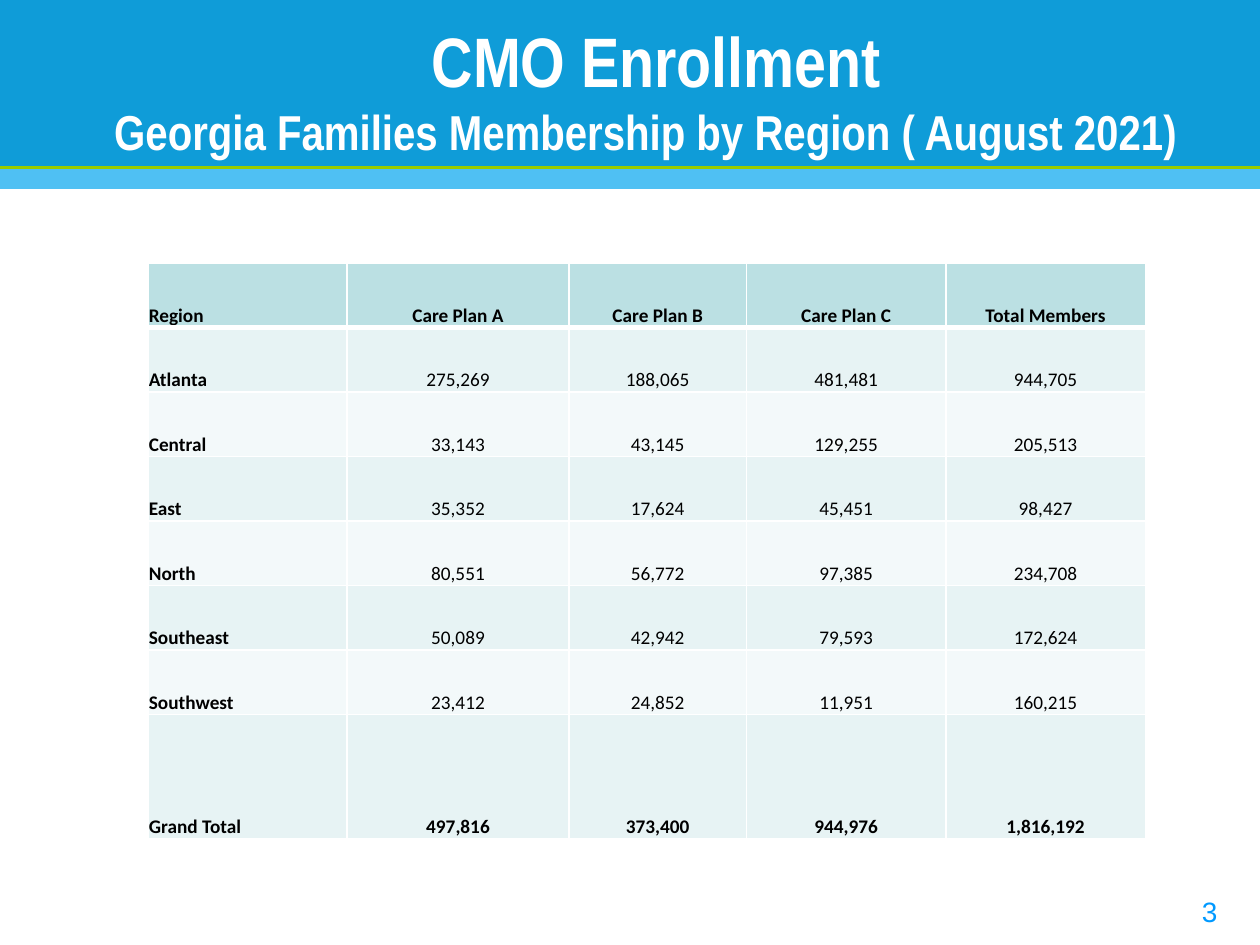
from dataclasses import dataclass

from lxml.etree import SubElement
from pptx import Presentation
from pptx.dml.color import RGBColor
from pptx.enum.shapes import MSO_CONNECTOR, MSO_SHAPE
from pptx.enum.text import MSO_ANCHOR, PP_ALIGN
from pptx.oxml.ns import qn
from pptx.slide import Slide
from pptx.table import _Cell
from pptx.text.text import _Paragraph
from pptx.util import Cm, Pt

COLORS = {
    "band": "0F9CD8",
    "strip": "4FC0F3",
    "rule": "99CC00",
    "page": "0099FF",
    "white": "FFFFFF",
    "black": "000000",
    "header": "BBE0E3",
    "odd": "E7F3F4",
    "even": "F3F9FA",
}
SLIDE_WIDTH = 25.4
BAND_HEIGHT = 3.38
COLUMN_WIDTHS = [4.02, 4.47, 3.58, 4.02, 4.02]
ROW_HEIGHT, TOTAL_HEIGHT = 1.3, 2.51
ENROLLMENT = [
    ("Region", "Care Plan A", "Care Plan B", "Care Plan C", "Total Members"),
    ("Atlanta", "275,269", "188,065", "481,481", "944,705"),
    ("Central", "33,143", "43,145", "129,255", "205,513"),
    ("East", "35,352", "17,624", "45,451", "98,427"),
    ("North", "80,551", "56,772", "97,385", "234,708"),
    ("Southeast", "50,089", "42,942", "79,593", "172,624"),
    ("Southwest", "23,412", "24,852", "11,951", "160,215"),
    ("Grand Total", "497,816", "373,400", "944,976", "1,816,192"),
]


@dataclass(frozen=True)
class Band:
    top: float
    height: float
    color: str


@dataclass(frozen=True)
class TextStyle:
    font: str
    size: int
    color: str
    bold: bool = False


@dataclass(frozen=True)
class TitleLine:
    text: str
    size: int
    right_margin: float


BANDS = [Band(0, BAND_HEIGHT, "band"), Band(BAND_HEIGHT, 0.43, "strip")]
TITLE_LINES = [
    TitleLine("CMO Enrollment", 40, 0),
    TitleLine("Georgia Families Membership by Region ( August 2021)", 28, 0.45),
]


def rgb(name: str) -> RGBColor:
    return RGBColor.from_string(COLORS[name])


def add_run(paragraph: _Paragraph, text: str, style: TextStyle) -> None:
    run = paragraph.add_run()
    run.text = text
    run.font.name = style.font
    run.font.size = Pt(style.size)
    run.font.bold = style.bold
    run.font.color.rgb = rgb(style.color)


def add_band(slide: Slide, band: Band) -> None:
    shape = slide.shapes.add_shape(
        MSO_SHAPE.RECTANGLE, 0, Cm(band.top), Cm(SLIDE_WIDTH), Cm(band.height)
    )
    shape.shadow.inherit = False
    shape.fill.solid()
    shape.fill.fore_color.rgb = rgb(band.color)
    shape.line.fill.background()


def add_rule(slide: Slide) -> None:
    rule = slide.shapes.add_connector(
        MSO_CONNECTOR.STRAIGHT, 0, Cm(BAND_HEIGHT), Cm(SLIDE_WIDTH), Cm(BAND_HEIGHT)
    )
    rule.line.color.rgb = rgb("rule")
    rule.line.width = Pt(1.5)
    SubElement(rule._element.spPr, qn("a:effectLst"))


def add_title(slide: Slide) -> None:
    box = slide.shapes.add_textbox(Cm(1.27), Cm(0.43), Cm(23.93), Cm(2.74))
    frame = box.text_frame
    frame.word_wrap = True
    frame.vertical_anchor = MSO_ANCHOR.MIDDLE
    for index, line in enumerate(TITLE_LINES):
        paragraph = frame.add_paragraph() if index else frame.paragraphs[0]
        paragraph.alignment = PP_ALIGN.CENTER
        paragraph._p.get_or_add_pPr().set("marR", str(Cm(line.right_margin)))
        add_run(paragraph, line.text, TextStyle("Arial Narrow", line.size, "white", True))


def add_page_number(slide: Slide) -> None:
    box = slide.shapes.add_textbox(Cm(23.98), Cm(17.91), Cm(1.19), Cm(0.94))
    box.text_frame.word_wrap = False
    add_run(box.text_frame.paragraphs[0], "3", TextStyle("Arial", 16, "page"))


def set_borders(cell: _Cell, top: float, bottom: float) -> None:
    """Draw white borders; must run before the cell fill to keep the XML order."""
    properties = cell._tc.get_or_add_tcPr()
    for side, width in {"L": 1, "R": 1, "T": top, "B": bottom}.items():
        line = SubElement(properties, qn(f"a:ln{side}"), w=str(Pt(width)))
        fill = SubElement(line, qn("a:solidFill"))
        SubElement(fill, qn("a:srgbClr"), val=COLORS["white"])


def fill_cell(cell: _Cell, text: str, row: int, column: int) -> None:
    set_borders(cell, top=3 if row == 1 else 1, bottom=3 if row == 0 else 1)
    cell.fill.solid()
    cell.fill.fore_color.rgb = rgb("header" if row == 0 else "odd" if row % 2 else "even")
    cell.vertical_anchor = MSO_ANCHOR.BOTTOM
    cell.margin_left = cell.margin_right = cell.margin_top = Cm(0.02)
    cell.margin_bottom = 0
    paragraph = cell.text_frame.paragraphs[0]
    paragraph.alignment = PP_ALIGN.CENTER if column else PP_ALIGN.LEFT
    bold = column == 0 or row in (0, len(ENROLLMENT) - 1)
    add_run(paragraph, text, TextStyle("Calibri", 11, "black", bold))


def add_enrollment_table(slide: Slide) -> None:
    heights = [ROW_HEIGHT] * (len(ENROLLMENT) - 1) + [TOTAL_HEIGHT]
    table = slide.shapes.add_table(
        len(heights), len(COLUMN_WIDTHS),
        Cm(2.98), Cm(5.3), Cm(sum(COLUMN_WIDTHS)), Cm(sum(heights)),
    ).table
    for column, width in zip(table.columns, COLUMN_WIDTHS):
        column.width = Cm(width)
    for row, height in zip(table.rows, heights):
        row.height = Cm(height)
    for row, values in enumerate(ENROLLMENT):
        for column, text in enumerate(values):
            fill_cell(table.cell(row, column), text, row, column)


def main() -> None:
    presentation = Presentation()
    presentation.slide_width = Cm(SLIDE_WIDTH)
    presentation.slide_height = Cm(19.05)
    slide = presentation.slides.add_slide(presentation.slide_layouts[6])
    for band in BANDS:
        add_band(slide, band)
    add_rule(slide)
    add_page_number(slide)
    add_title(slide)
    add_enrollment_table(slide)
    presentation.save("out.pptx")


if __name__ == "__main__":
    main()
